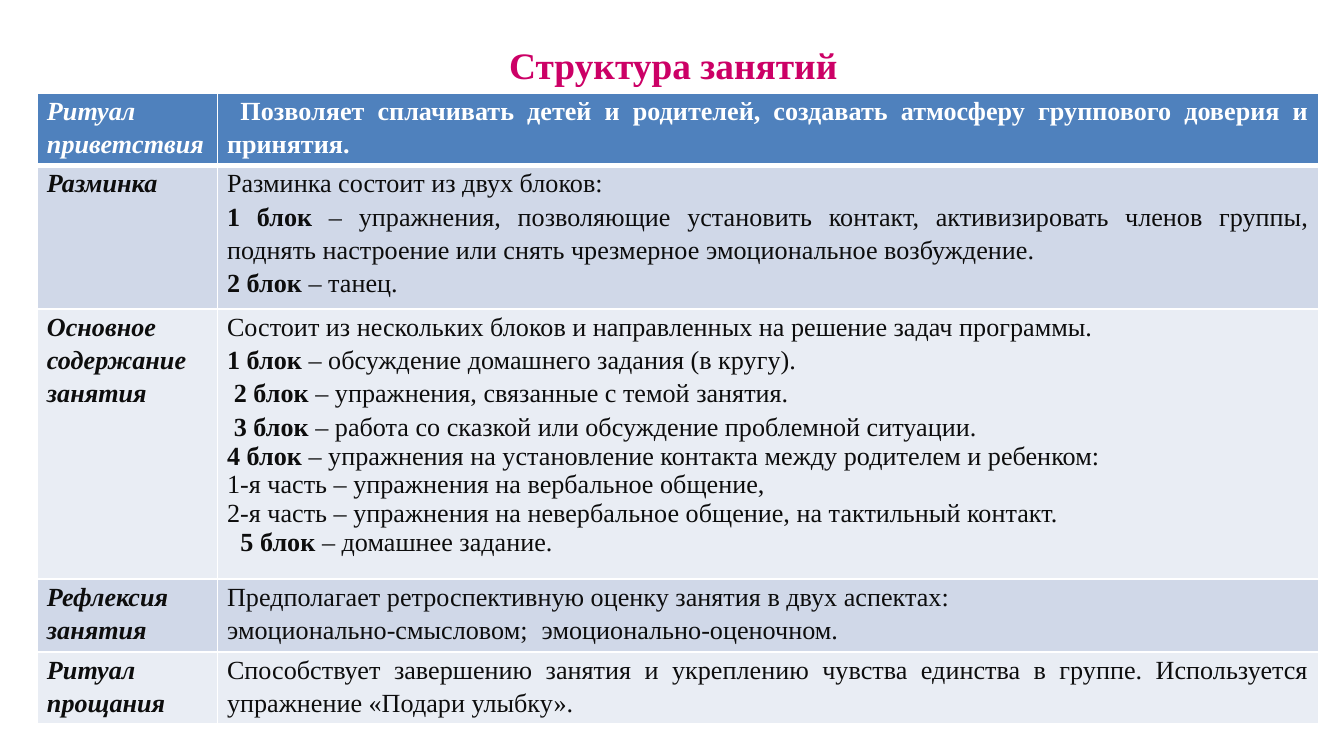
import pptx
import pptx.dml.color
import pptx.enum.text
import pptx.oxml.ns
import pptx.util
from lxml import etree
from pptx.util import Inches

COLORS = {
    "title": "CC0066", "header": "4F81BD", "band_dark": "D0D8E8",
    "band_light": "E9EDF4", "text": "0D0D0D", "white": "FFFFFF",
}
FONT = "Times New Roman"
ALIGN = pptx.enum.text.PP_ALIGN
SLIDE_WIDTH = Inches(10)
SLIDE_HEIGHT = SLIDE_WIDTH * 9 // 16
COLUMN_WIDTHS = [1.34, 8.19]
ROW_HEIGHTS = [0.54, 1.07, 2.01, 0.54, 0.54]
JUSTIFIED = {"alignment": ALIGN.JUSTIFY, "line_spacing": 1.15}
PLAIN = {"alignment": ALIGN.LEFT}


def line(text, layout=JUSTIFIED, indent=0, tab=None):
    """Describe one paragraph; asterisks enclose its bold parts."""
    return {"text": text, "layout": layout, "indent": indent, "tab": tab}


STAGES = [
    ("Ритуал приветствия", [
        line("*Позволяет сплачивать детей и родителей, создавать атмосферу "
             "группового доверия и принятия.*", indent=0.1),
    ]),
    ("Разминка", [
        line("Разминка состоит из двух блоков:"),
        line("*1 блок* – упражнения, позволяющие установить контакт, "
             "активизировать членов группы, поднять настроение или снять "
             "чрезмерное эмоциональное возбуждение."),
        line("*2 блок* – танец."),
    ]),
    ("Основное содержание занятия", [
        line("Состоит из нескольких блоков и направленных на решение задач программы."),
        line("*1 блок* – обсуждение домашнего задания (в кругу)."),
        line("*2 блок* – упражнения, связанные с темой занятия.", indent=0.05),
        line("*3 блок* – работа со сказкой или обсуждение проблемной ситуации.",
             indent=0.05),
        line("*4 блок* – упражнения на установление контакта между родителем "
             "и ребенком:", PLAIN),
        line("1-я часть – упражнения на вербальное общение,", PLAIN),
        line("2-я часть – упражнения на невербальное общение, на тактильный "
             "контакт.", PLAIN),
        line("*5 блок* – домашнее задание.", PLAIN, indent=0.1),
    ]),
    ("Рефлексия занятия", [
        line("Предполагает ретроспективную оценку занятия в двух аспектах:"),
        line("эмоционально-смысловом;\tэмоционально-оценочном.", tab=2.34),
    ]),
    ("Ритуал прощания", [
        line("Способствует завершению занятия и укреплению чувства единства в "
             "группе. Используется упражнение «Подари улыбку»."),
    ]),
]


def set_all(target, values):
    for name, value in values.items():
        setattr(target, name, value)


def rgb(color):
    return pptx.dml.color.RGBColor.from_string(COLORS[color])


def add_xml(parent, tag, **attributes):
    return etree.SubElement(parent, pptx.oxml.ns.qn(tag), attributes)


def add_run(paragraph, text, color, size=14, bold=False, italic=False):
    run = paragraph.add_run()
    run.text = text
    set_all(run.font, {"name": FONT, "size": pptx.util.Pt(size),
                       "bold": bold, "italic": italic})
    run.font.color.rgb = rgb(color)


def add_title(slide, text):
    title = slide.shapes.title
    set_all(title, {"left": Inches(0.51), "top": Inches(0.21),
                    "width": Inches(9), "height": Inches(0.47)})
    frame = title.text_frame
    set_all(frame, {"vertical_anchor": pptx.enum.text.MSO_ANCHOR.BOTTOM,
                    "margin_top": 0, "margin_bottom": Inches(0.03)})
    paragraph = frame.paragraphs[0]
    paragraph.alignment = ALIGN.CENTER
    add_run(paragraph, text, "title", size=20, bold=True)


def set_borders(cell, widths):
    properties = cell._tc.get_or_add_tcPr()
    for side, width in widths.items():
        border = add_xml(properties, f"a:ln{side}", w=str(pptx.util.Pt(width)))
        add_xml(add_xml(border, "a:solidFill"), "a:srgbClr", val=COLORS["white"])


def fill_cell(cell, lines, row, italic=False):
    # Borders, with a heavy rule under the header
    set_borders(cell, {"L": 1, "R": 1, "T": 3 if row == 1 else 1,
                       "B": 3 if row == 0 else 1})
    cell.fill.solid()
    band = "band_dark" if row % 2 else "band_light"
    cell.fill.fore_color.rgb = rgb("header" if row == 0 else band)
    set_all(cell, {"margin_left": Inches(0.07), "margin_right": Inches(0.07),
                   "margin_top": 0, "margin_bottom": 0})

    # Paragraphs
    frame = cell.text_frame
    for index, entry in enumerate(lines):
        paragraph = frame.add_paragraph() if index else frame.paragraphs[0]
        set_all(paragraph, entry["layout"])
        properties = paragraph._p.get_or_add_pPr()
        if entry["indent"]:
            properties.set("indent", str(Inches(entry["indent"])))
        if entry["tab"]:
            add_xml(add_xml(properties, "a:tabLst"), "a:tab",
                    pos=str(Inches(entry["tab"])), algn="l")
        for part, text in enumerate(entry["text"].split("*")):
            if text:
                add_run(paragraph, text, "white" if row == 0 else "text",
                        bold=part % 2 == 1, italic=italic)


def add_stage_table(slide):
    stages = slide.shapes.add_table(
        len(STAGES), len(COLUMN_WIDTHS), Inches(0.28), Inches(0.69),
        Inches(sum(COLUMN_WIDTHS)), Inches(sum(ROW_HEIGHTS))).table
    for column, width in zip(stages.columns, COLUMN_WIDTHS):
        column.width = Inches(width)
    for row, (name, description) in enumerate(STAGES):
        stages.rows[row].height = Inches(ROW_HEIGHTS[row])
        fill_cell(stages.cell(row, 0), [line(f"*{name}*")], row, italic=True)
        fill_cell(stages.cell(row, 1), description, row)


def main():
    presentation = pptx.Presentation()
    set_all(presentation, {"slide_width": SLIDE_WIDTH, "slide_height": SLIDE_HEIGHT})
    slide = presentation.slides.add_slide(presentation.slide_layouts[5])
    add_title(slide, "Структура занятий")
    add_stage_table(slide)
    presentation.save("out.pptx")


if __name__ == "__main__":
    main()
